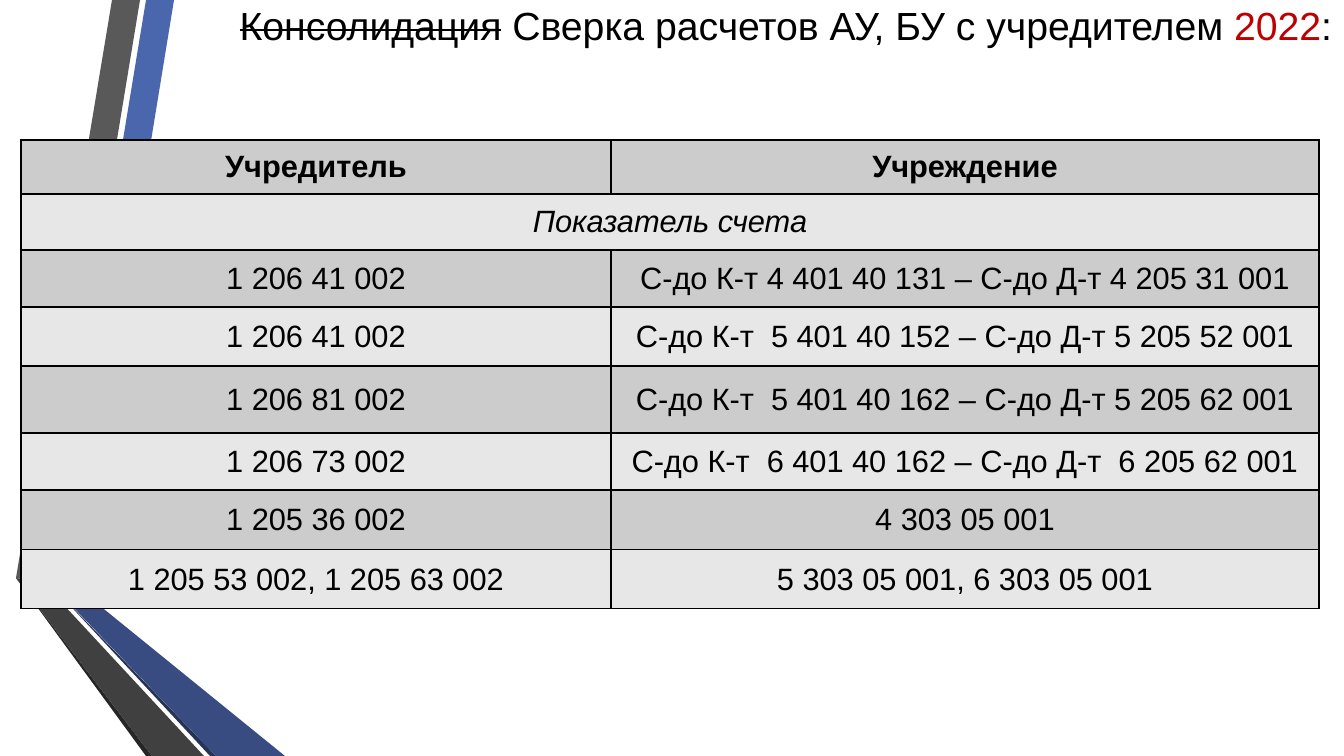
"""Slide with a table reconciling the founder's and the institution's accounts."""
from lxml.etree import SubElement
from pptx import Presentation
from pptx.dml.color import RGBColor as RGB
from pptx.enum.text import MSO_ANCHOR as ANCHOR, PP_ALIGN as ALIGN
from pptx.oxml.ns import qn
from pptx.util import Emu, Pt

SCALE = 914400 / 100.8
COLORS = {
    "black": "000000", "red": "C00000", "dark_band": "CCCCCC", "light_band": "E7E7E7",
    "blue": "4A66AC", "grey": "595959", "charcoal": "262626", "navy": "253356",
    "deep_blue": "384C81", "deep_grey": "404040",
}


def px(length):
    return Emu(round(length * SCALE))


def style_run(run, size, color="black", bold=False, italic=False):
    font = run.font
    font.name, font.size, font.bold, font.italic = "Arial", Pt(size), bold, italic
    font.color.rgb = RGB.from_string(COLORS[color])


deck = Presentation()
deck.slide_width, deck.slide_height = px(1344), px(756)
slide = deck.slides.add_slide(deck.slide_layouts[6])

ribbons = [
    ("blue", [(50, 583), (78, 588), (174, 0), (146, 0)]),
    ("grey", [(140, 0), (112, 0), (16, 578), (44, 582)]),
    ("charcoal", [(16, 578), (146, 756), (152, 756)]),
    ("navy", [(50, 584), (210, 756), (216, 756)]),
    ("deep_blue", [(50, 583), (216, 756), (285, 756), (78, 588)]),
    ("deep_grey", [(204, 756), (48, 588), (44, 582), (16, 578), (152, 756)]),
]
for color, corners in ribbons:
    outline = slide.shapes.build_freeform(*corners[0], scale=SCALE)
    outline.add_line_segments(corners[1:], close=True)
    ribbon = outline.convert_to_shape()
    ribbon.shadow.inherit = False
    ribbon.fill.solid()
    ribbon.fill.fore_color.rgb = RGB.from_string(COLORS[color])
    ribbon.line.fill.background()

title = slide.shapes.add_textbox(px(55), px(0), px(1287), px(50)).text_frame
title.word_wrap = True
title.vertical_anchor = ANCHOR.MIDDLE
heading = title.paragraphs[0]
heading.alignment = ALIGN.RIGHT
for words, color in [
    ("Консолидация", "black"),
    (" Сверка расчетов АУ, БУ с учредителем ", "black"),
    ("2022", "red"),
    (":", "black"),
]:
    run = heading.add_run()
    run.text = words
    style_run(run, 28, color)
heading.runs[0]._r.get_or_add_rPr().set("strike", "sngStrike")

accounts = [
    ("Учредитель", "Учреждение"),
    ("Показатель счета", ""),
    ("1 206 41 002", "С-до К-т 4 401 40 131 – С-до Д-т 4 205 31 001"),
    ("1 206 41 002", "С-до К-т  5 401 40 152 – С-до Д-т 5 205 52 001"),
    ("1 206 81 002", "С-до К-т  5 401 40 162 – С-до Д-т 5 205 62 001"),
    ("1 206 73 002", "С-до К-т  6 401 40 162 – С-до Д-т  6 205 62 001"),
    ("1 205 36 002", "4 303 05 001"),
    ("1 205 53 002, 1 205 63 002", "5 303 05 001, 6 303 05 001"),
]
column_widths = [590, 708]
row_heights = [54, 56, 57, 59, 67, 57, 60, 59]
table = slide.shapes.add_table(
    len(accounts), 2, px(21), px(140), px(sum(column_widths)), px(sum(row_heights))
).table
for column, width in zip(table.columns, column_widths):
    column.width = px(width)
for row, height in zip(table.rows, row_heights):
    row.height = px(height)
table.cell(1, 0).merge(table.cell(1, 1))

for r, entries in enumerate(accounts):
    band = "light_band" if r % 2 else "dark_band"
    for c, entry in enumerate(entries):
        cell = table.cell(r, c)
        cell.vertical_anchor = ANCHOR.MIDDLE
        properties = cell._tc.get_or_add_tcPr()
        for side in ("a:lnL", "a:lnR", "a:lnT", "a:lnB"):
            border = SubElement(properties, qn(side), w=str(Pt(1)))
            ink = SubElement(border, qn("a:solidFill"))
            SubElement(ink, qn("a:srgbClr"), val=COLORS["black"])
        cell.fill.solid()
        cell.fill.fore_color.rgb = RGB.from_string(COLORS[band])
        if entry:
            cell.text_frame.text = entry
            line = cell.text_frame.paragraphs[0]
            line.alignment = ALIGN.CENTER
            style_run(line.runs[0], 22, bold=r == 0, italic=r == 1)

deck.save("out.pptx")
